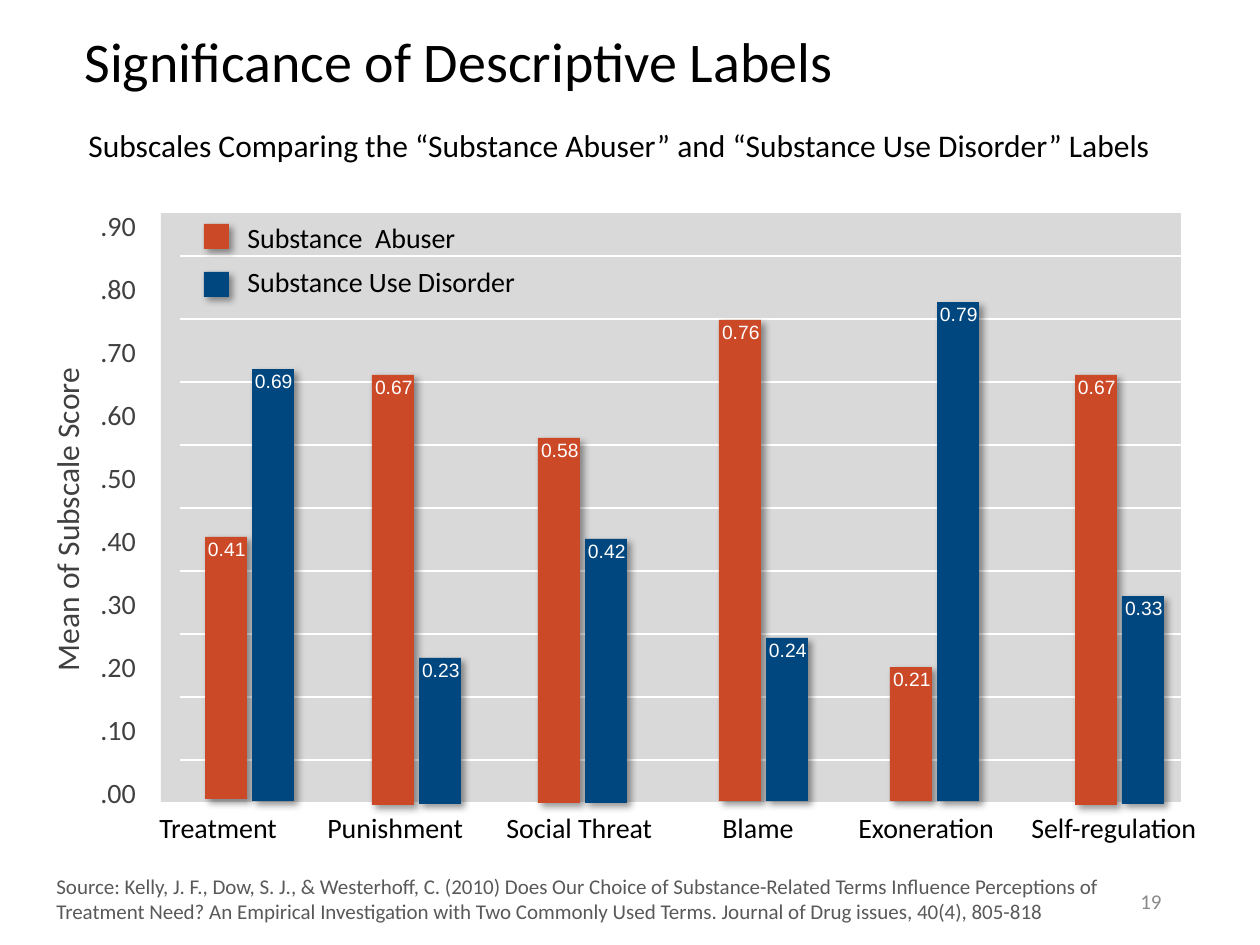
from dataclasses import dataclass

from lxml import etree
from pptx import Presentation
from pptx.dml.color import RGBColor
from pptx.enum.shapes import MSO_CONNECTOR, MSO_SHAPE
from pptx.enum.text import MSO_ANCHOR, MSO_AUTO_SIZE, PP_ALIGN
from pptx.oxml.ns import qn
from pptx.util import Emu, Pt

RECTANGLE = MSO_SHAPE.RECTANGLE
STRAIGHT = MSO_CONNECTOR.STRAIGHT
TOP, MIDDLE = MSO_ANCHOR.TOP, MSO_ANCHOR.MIDDLE
LEFT, RIGHT = PP_ALIGN.LEFT, PP_ALIGN.RIGHT
FIT, NO_FIT = MSO_AUTO_SIZE.SHAPE_TO_FIT_TEXT, MSO_AUTO_SIZE.NONE


@dataclass(frozen=True)
class Theme:
    font: str = "Calibri"
    value_font: str = "Arial"
    black: str = "000000"
    white: str = "FFFFFF"
    axis: str = "404040"
    source: str = "595959"
    number: str = "898989"
    plot: str = "D9D9D9"
    abuser: str = "CC4927"
    disorder: str = "00467F"
    title_size: int = 32
    heading_size: int = 18
    label_size: int = 16
    small_size: int = 12
    value_size: int = 11


THEME = Theme()
SERIES_COLORS = (THEME.abuser, THEME.disorder)

TITLE = "Significance of Descriptive Labels"
SUBTITLE = "Subscales Comparing the “Substance Abuser” and “Substance Use Disorder” Labels"
AXIS_TITLE = "Mean of Subscale Score"
SOURCE = (
    "Source: Kelly, J. F., Dow, S. J., & Westerhoff, C. (2010) Does Our Choice of "
    "Substance-Related Terms Influence Perceptions of Treatment Need? An Empirical "
    "Investigation with Two Commonly Used Terms. Journal of Drug issues, 40(4), 805-818"
)
PAGE_NUMBER = "19"
AXIS_LABELS = [f".{tenth}0" for tenth in range(9, -1, -1)]

# name, label left, first bar left, (value, top, bottom) per series
SUBSCALES = [
    ("Treatment", 160, 205, [(0.41, 537, 799), (0.69, 369, 801)]),
    ("Punishment", 328, 372, [(0.67, 375, 805), (0.23, 658, 804)]),
    ("Social Threat", 507, 538, [(0.58, 438, 803), (0.42, 539, 803)]),
    ("Blame", 723, 719, [(0.76, 320, 801), (0.24, 638, 801)]),
    ("Exoneration", 859, 890, [(0.21, 667, 801), (0.79, 302, 801)]),
    ("Self-regulation", 1032, 1075, [(0.67, 375, 805), (0.33, 596, 804)]),
]
LEGEND = [("Substance  Abuser", 224, 214, 242), ("Substance Use Disorder", 272, 258, 321)]

GRID_LEFT, GRID_RIGHT, GRID_TOP, GRID_STEP, GRID_COUNT = 180, 1200, 256, 63, 9
BAR_WIDTH, BAR_STEP, VALUE_INSET = 42, 47, 3
LABELS_LEFT = SUBSCALES[0][1]


def px(value):
    return Emu(round(value * 914400 / 126))


def apply(target, formats):
    for name, value in formats.items():
        setattr(target, name, value)


def add_text(page, lines, frame, size, color=THEME.black, font=THEME.font, align=LEFT,
             anchor=TOP, fit=FIT, spacing=None, inset=None, rotation=0, tabs=()):
    box = page.shapes.add_textbox(*map(px, frame))
    box.rotation = rotation
    text = box.text_frame
    apply(text, {"word_wrap": True, "auto_size": fit, "vertical_anchor": anchor})
    if inset is not None:
        sides = ("left", "top", "right", "bottom")
        apply(text, {f"margin_{side}": px(inset) for side in sides})
    for index, line in enumerate(lines):
        para = text.add_paragraph() if index else text.paragraphs[0]
        apply(para, {"alignment": align, "line_spacing": spacing})
        if tabs:
            stops = etree.SubElement(para._p.get_or_add_pPr(), qn("a:tabLst"))
            for tab in tabs:
                etree.SubElement(stops, qn("a:tab"), pos=str(px(tab)), algn="l")
        span = para.add_run()
        span.text = line
        apply(span.font, {"name": font, "size": Pt(size)})
        span.font.color.rgb = RGBColor.from_string(color)


def add_block(page, frame, color, shadow=True):
    block = page.shapes.add_shape(RECTANGLE, *map(px, frame))
    block.fill.solid()
    block.fill.fore_color.rgb = RGBColor.from_string(color)
    block.line.fill.background()
    block.shadow.inherit = False
    if shadow:
        effects = block._element.spPr.find(qn("a:effectLst"))
        outer = etree.SubElement(
            effects, qn("a:outerShdw"), blurRad=str(Pt(4)), dist=str(Pt(3)),
            dir=str(45 * 60000), algn="tl", rotWithShape="0")
        tint = etree.SubElement(outer, qn("a:srgbClr"), val=THEME.black)
        etree.SubElement(tint, qn("a:alpha"), val="40000")


def add_grid(page):
    add_block(page, (161, 213, 1020, 589), THEME.plot, shadow=False)
    for index in range(GRID_COUNT):
        top = px(GRID_TOP + index * GRID_STEP)
        rule = page.shapes.add_connector(STRAIGHT, px(GRID_LEFT), top, px(GRID_RIGHT), top)
        rule.line.width = Pt(1.5)
        rule.line.color.rgb = RGBColor.from_string(THEME.white)
        etree.SubElement(rule._element.spPr, qn("a:effectLst"))


def add_captions(page):
    add_text(page, [TITLE], (72, 47, 1086, 35), THEME.title_size,
             anchor=MIDDLE, fit=NO_FIT, spacing=0.9)
    add_text(page, [PAGE_NUMBER], (890, 876, 284, 50), THEME.small_size, THEME.number,
             align=RIGHT, anchor=MIDDLE, fit=NO_FIT)
    add_text(page, AXIS_LABELS, (88, 173, 84, 640), THEME.label_size, THEME.axis,
             spacing=Pt(36))
    add_text(page, [SUBTITLE], (76, 120, 1114, 50), THEME.heading_size)
    add_text(page, [AXIS_TITLE], (-171, 421, 475, 50), THEME.heading_size, THEME.axis,
             rotation=270)
    add_text(page, [SOURCE], (44, 867, 1082, 64), THEME.small_size, THEME.source)
    names = "\t".join(name for name, *_ in SUBSCALES)
    tabs = [left - LABELS_LEFT for _, left, *_ in SUBSCALES[1:]]
    add_text(page, [names], (147, 804, 1068, 47), THEME.label_size, tabs=tabs)


def add_bars(page):
    labels = []
    for _, _, first, bars in SUBSCALES:
        for index, (value, top, bottom) in enumerate(bars):
            left = first + index * BAR_STEP
            add_block(page, (left, top, BAR_WIDTH, bottom - top), SERIES_COLORS[index])
            labels.append((f"{value:.2f}", left + VALUE_INSET, top))
    for label, left, top in labels:
        add_text(page, [label], (left, top, 43, 23), THEME.value_size, THEME.white,
                 THEME.value_font, inset=0)


def add_legend(page):
    for (name, key_top, text_top, width), color in zip(LEGEND, SERIES_COLORS):
        add_block(page, (204, key_top, 25, 25), color)
        add_text(page, [name], (235, text_top, width, 47), THEME.label_size)


def main():
    deck = Presentation()
    apply(deck, {"slide_width": px(1260), "slide_height": px(945)})
    page = deck.slides.add_slide(deck.slide_layouts[6])
    for build in (add_grid, add_captions, add_bars, add_legend):
        build(page)
    deck.save("out.pptx")


if __name__ == "__main__":
    main()
